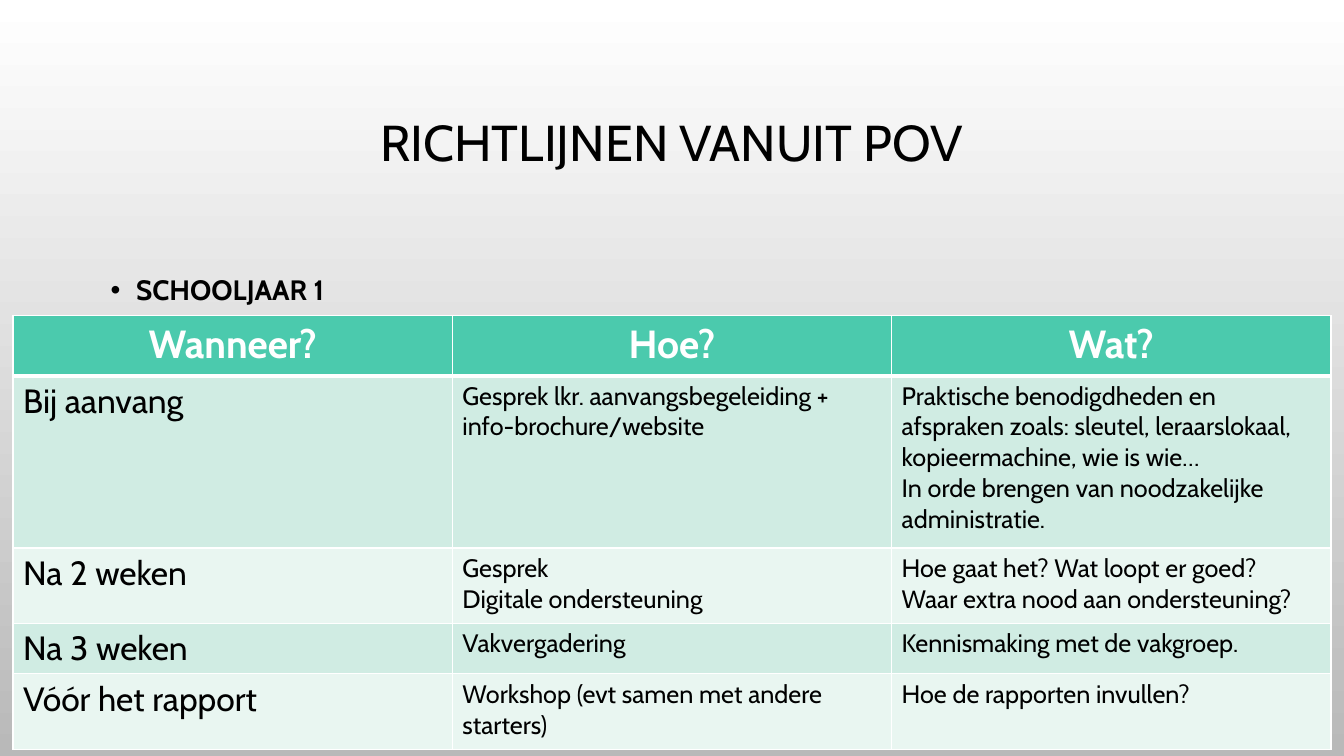
from dataclasses import dataclass

from lxml import etree
from pptx import Presentation
from pptx.dml.color import RGBColor
from pptx.enum.text import MSO_ANCHOR, PP_ALIGN
from pptx.oxml.ns import qn
from pptx.util import Cm, Pt

CENTER, LEFT = PP_ALIGN.CENTER, PP_ALIGN.LEFT
TOP, MIDDLE = MSO_ANCHOR.TOP, MSO_ANCHOR.MIDDLE


@dataclass(frozen=True)
class Theme:
    font: str = "Cabin"
    ink: str = "000000"
    white: str = "FFFFFF"
    backdrop_end: str = "B9B9B9"
    header_fill: str = "4BCAAD"
    band_fills: tuple = ("D0ECE3", "E9F6F1")
    title_size: int = 36
    header_size: int = 28
    moment_size: int = 24
    bullet_size: int = 20
    detail_size: int = 18
    thin_rule: int = 1
    thick_rule: int = 3


class SlideBuilder:
    def __init__(self, slide, theme):
        self.slide = slide
        self.theme = theme

    def background(self):
        fill = self.slide.background.fill
        fill.gradient()
        fill.gradient_angle = 270
        for stop, color in zip(fill.gradient_stops, (self.theme.white, self.theme.backdrop_end)):
            stop.color.rgb = RGBColor.from_string(color)

    def set_text(self, frame, text, size, color, bold=False, align=LEFT):
        frame.text = text
        for paragraph in frame.paragraphs:
            paragraph.alignment = align
            for run in paragraph.runs:
                run.font.name = self.theme.font
                run.font.size = Pt(size)
                run.font.bold = bold
                run.font.color.rgb = RGBColor.from_string(color)

    def text_box(self, box, text, size, spacing, anchor=TOP, **style):
        frame = self.slide.shapes.add_textbox(*map(Cm, box)).text_frame
        frame.word_wrap = True
        frame.vertical_anchor = anchor
        self.set_text(frame, text, size, self.theme.ink, **style)
        for paragraph in frame.paragraphs:
            paragraph.line_spacing = spacing
        return frame

    def bullet_box(self, box, text, size, spacing, **style):
        frame = self.text_box(box, text, size, spacing, **style)
        for paragraph in frame.paragraphs:
            properties = paragraph._p.get_or_add_pPr()
            properties.set("marL", str(Cm(0.64)))
            properties.set("indent", str(Cm(-0.64)))
            etree.SubElement(properties, qn("a:buFont"), typeface="Arial")
            etree.SubElement(properties, qn("a:buChar"), char="•")

    def cell_borders(self, cell, top, bottom):
        properties = cell._tc.get_or_add_tcPr()
        thin = self.theme.thin_rule
        sides = (("a:lnL", thin), ("a:lnR", thin), ("a:lnT", top), ("a:lnB", bottom))
        for position, (side, width) in enumerate(sides):
            line = etree.Element(qn(side), w=str(Pt(width)))
            solid = etree.SubElement(line, qn("a:solidFill"))
            etree.SubElement(solid, qn("a:srgbClr"), val=self.theme.white)
            properties.insert(position, line)

    def table(self, left, top, column_width, row_heights, rows):
        theme = self.theme
        columns = len(rows[0])
        table = self.slide.shapes.add_table(
            len(rows), columns, Cm(left), Cm(top),
            Cm(column_width * columns), Cm(sum(row_heights))).table
        for column in table.columns:
            column.width = Cm(column_width)
        for r, (height, texts) in enumerate(zip(row_heights, rows)):
            table.rows[r].height = Cm(height)
            for c, text in enumerate(texts):
                cell = table.cell(r, c)
                cell.fill.solid()
                if r == 0:
                    fill = theme.header_fill
                    self.set_text(cell.text_frame, text, theme.header_size,
                                  theme.white, bold=True, align=CENTER)
                else:
                    fill = theme.band_fills[(r - 1) % 2]
                    size = theme.moment_size if c == 0 else theme.detail_size
                    self.set_text(cell.text_frame, text, size, theme.ink)
                cell.fill.fore_color.rgb = RGBColor.from_string(fill)
                self.cell_borders(
                    cell,
                    top=theme.thick_rule if r == 1 else theme.thin_rule,
                    bottom=theme.thick_rule if r == 0 else theme.thin_rule)


GUIDELINES = [
    ("Wanneer?", "Hoe?", "Wat?"),
    ("Bij aanvang",
     "Gesprek lkr. aanvangsbegeleiding + info-brochure/website",
     "Praktische benodigdheden en afspraken zoals: sleutel, leraarslokaal, "
     "kopieermachine, wie is wie…\nIn orde brengen van noodzakelijke administratie."),
    ("Na 2 weken",
     "Gesprek\nDigitale ondersteuning",
     "Hoe gaat het? Wat loopt er goed?\nWaar extra nood aan ondersteuning?"),
    ("Na 3 weken", "Vakvergadering", "Kennismaking met de vakgroep."),
    ("Vóór het rapport",
     "Workshop (evt samen met andere starters)",
     "Hoe de rapporten invullen?"),
]


def main():
    presentation = Presentation()
    presentation.slide_width, presentation.slide_height = Cm(33.87), Cm(19.05)
    slide = presentation.slides.add_slide(presentation.slide_layouts[6])
    theme = Theme()
    builder = SlideBuilder(slide, theme)
    builder.background()

    # Title and school year
    builder.text_box((2.54, 1.73, 28.78, 3.86), "RICHTLIJNEN VANUIT POV",
                     theme.title_size, 0.9, anchor=MIDDLE, align=CENTER)
    builder.bullet_box((2.54, 6.58, 28.78, 9.5), "SCHOOLJAAR 1",
                       theme.bullet_size, 1.2, bold=True)

    # Guidelines per moment
    builder.table(0.33, 7.95, 11.07, (1.52, 4.34, 1.9, 1.1, 1.9), GUIDELINES)

    presentation.save("out.pptx")


if __name__ == "__main__":
    main()
